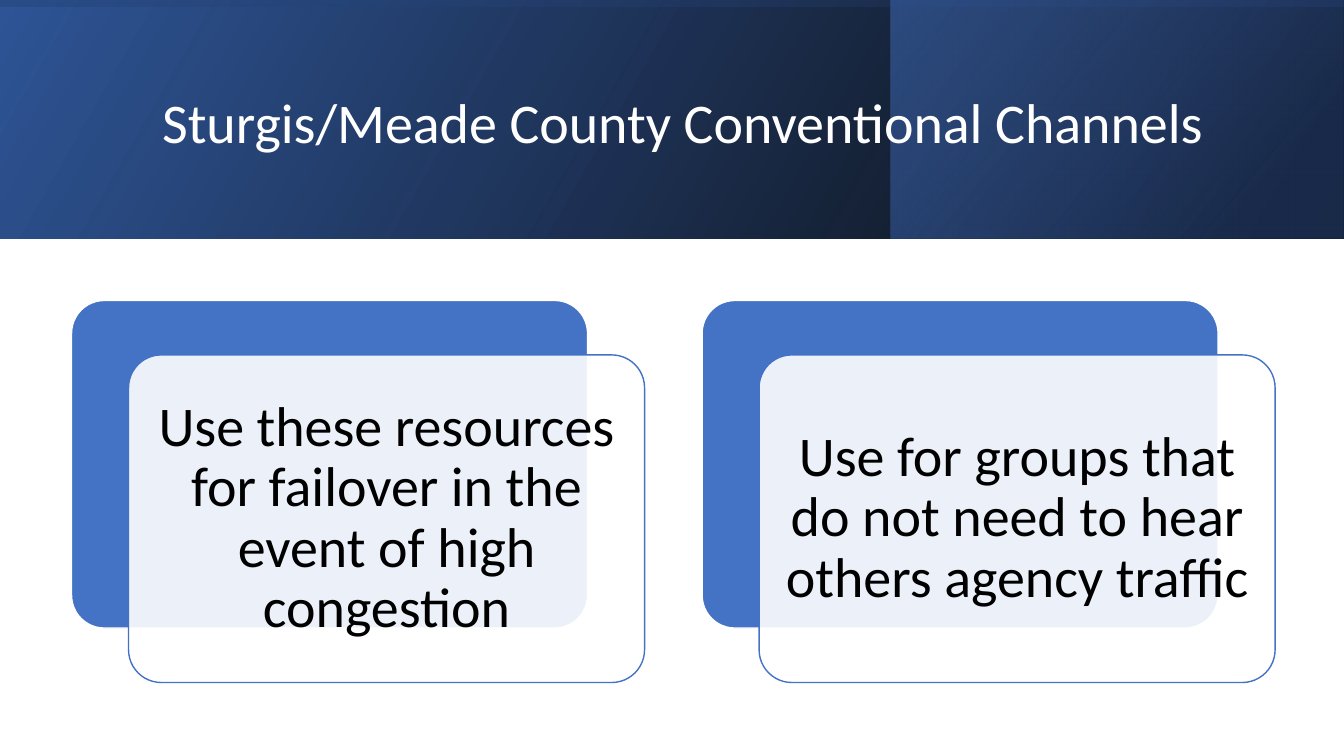
import pptx
import pptx.util
import pptx.dml.color
import pptx.enum.shapes
import pptx.enum.text
import lxml.etree

Pt = pptx.util.Pt
RGBColor = pptx.dml.color.RGBColor
SHAPE = pptx.enum.shapes.MSO_SHAPE
MIDDLE = pptx.enum.text.MSO_ANCHOR.MIDDLE
CENTER = pptx.enum.text.PP_ALIGN.CENTER

BLACK = RGBColor(0x00, 0x00, 0x00)
WHITE = RGBColor(0xFF, 0xFF, 0xFF)
BLUE = RGBColor(0x44, 0x72, 0xC4)
DEEP_BLUE = RGBColor(0x2F, 0x55, 0x97)
NAVY = RGBColor(0x20, 0x38, 0x64)
W, H, BAND_H = 960, 540, 170.6
CARD_W, CARD_H = 368.6, 234


def set_alpha(fill_element, percents):
    colors = fill_element.iter(pptx.oxml.ns.qn("a:srgbClr"))
    for color, percent in zip(colors, percents):
        alpha = lxml.etree.SubElement(color, pptx.oxml.ns.qn("a:alpha"))
        alpha.set("val", str(percent * 1000))


def write(tf, text, color):
    tf.word_wrap = True
    tf.vertical_anchor = MIDDLE
    p = tf.paragraphs[0]
    p.text = text
    p.line_spacing = 0.9
    p.font.name = "Calibri"
    p.font.size = Pt(40)
    p.font.color.rgb = color
    return p


prs = pptx.Presentation()
prs.slide_width, prs.slide_height = Pt(W), Pt(H)
s = prs.slides.add_slide(prs.slide_layouts[6])

bands = [
    ((0, 0, W, BAND_H), 0, 30, [(0, BLACK, 96), (1, DEEP_BLUE, 100)]),
    ((636.5, 0, 323, BAND_H), 0, 40, [(0.19, NAVY, 68), (1, BLUE, 48)]),
    (((W - BAND_H) / 2, (BAND_H - W) / 2, BAND_H, W), 270, 10,
     [(0.23, DEEP_BLUE, 16), (0.99, BLACK, 45)]),
]
for box, rotation, angle, stops in bands:
    sp = s.shapes.add_shape(SHAPE.RECTANGLE, *map(Pt, box))
    sp.shadow.inherit = False
    sp.line.fill.background()
    sp.rotation = rotation
    sp._element.spPr.xfrm.set("flipH", "1")
    sp.fill.gradient()
    sp.fill.gradient_angle = angle
    for stop, (position, color, alpha) in zip(sp.fill.gradient_stops, stops):
        stop.position = position
        stop.color.rgb = color
    set_alpha(sp._element.spPr, [alpha for position, color, alpha in stops])

title = s.shapes.add_textbox(Pt(108.7), Pt(27.4), Pt(765.4), Pt(123.8))
write(title.text_frame, "Sturgis/Meade County Conventional Channels", WHITE)

cards = [
    "Use these resources for failover in the event of high congestion",
    "Use for groups that do not need to hear others agency traffic",
]
for i, text in enumerate(cards):
    left, top = 51.1 + 450.4 * i, 214.6
    for dx, dy, fill, line in [(0, 0, BLUE, WHITE), (40.7, 38.9, WHITE, BLUE)]:
        sp = s.shapes.add_shape(SHAPE.ROUNDED_RECTANGLE, Pt(left + dx), Pt(top + dy),
                                Pt(CARD_W), Pt(CARD_H))
        sp.adjustments[0] = 0.1
        sp.shadow.inherit = False
        sp.fill.solid()
        sp.fill.fore_color.rgb = fill
        sp.line.color.rgb = line
        sp.line.width = Pt(1)
    set_alpha(sp._element.spPr.find(pptx.oxml.ns.qn("a:solidFill")), [90])
    tf = sp.text_frame
    tf.margin_left = tf.margin_right = tf.margin_top = tf.margin_bottom = Pt(12)
    write(tf, text, BLACK).alignment = CENTER

prs.save("out.pptx")
